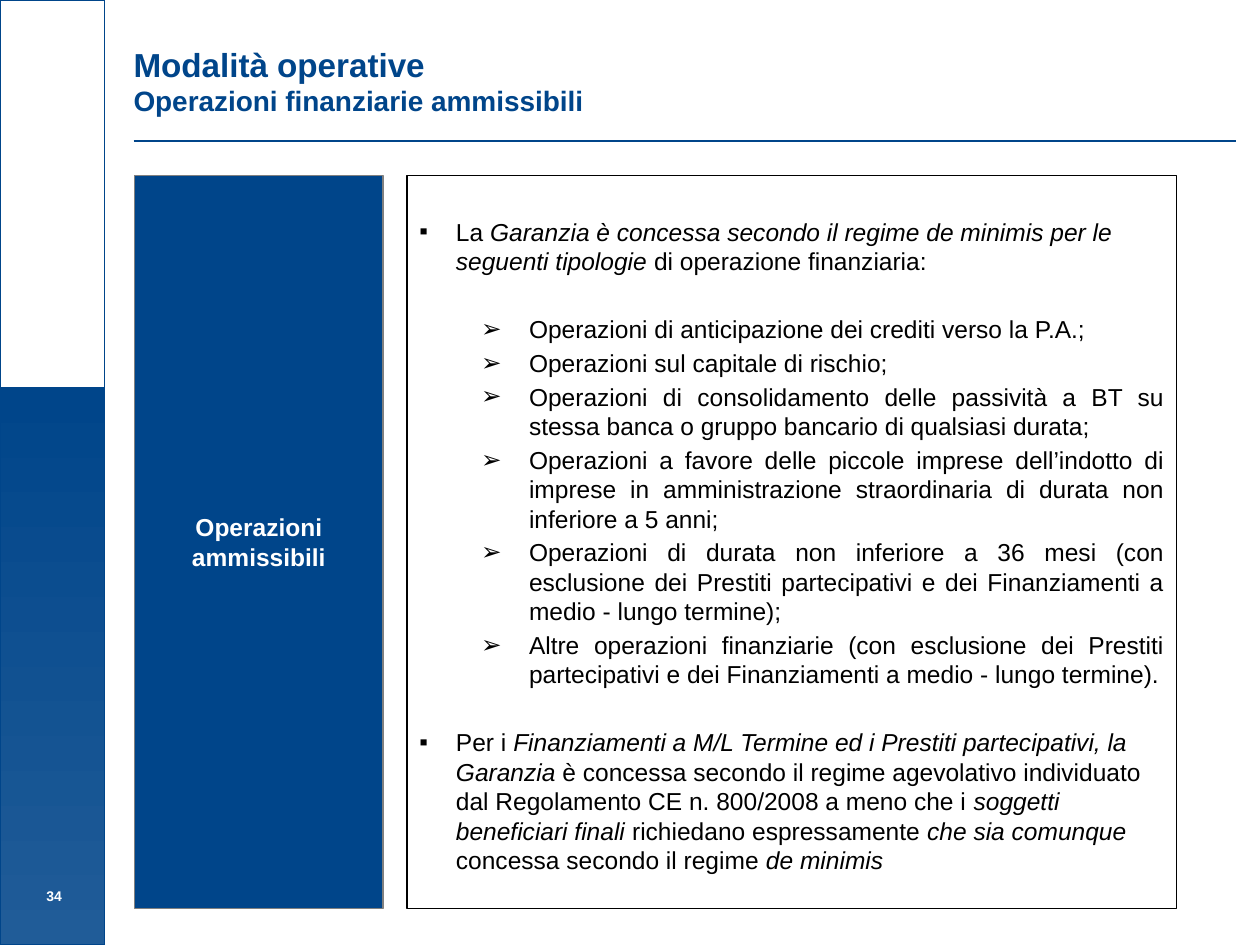
from dataclasses import dataclass

from lxml import etree
from pptx import Presentation
from pptx.dml.color import RGBColor
from pptx.enum import shapes, text
from pptx.oxml import ns
from pptx.util import Inches, Pt


@dataclass(frozen=True)
class Theme:
    font: str = "Arial"
    blue: str = "00458A"
    band_end: str = "205C98"
    grey: str = "808080"
    black: str = "000000"
    white: str = "FFFFFF"
    title: float = 19
    subtitle: float = 16
    body: float = 14
    number: float = 8
    gap: float = 2.5
    section_gap: float = 22


THEME = Theme()
LEVELS = {
    "▪": {"margin": 0.29, "hanging": 0.29, "align": text.PP_ALIGN.LEFT},
    "➢": {"margin": 0.87, "hanging": 0.38, "align": text.PP_ALIGN.JUSTIFY},
}
INTRO = [
    ("La ", False),
    ("Garanzia è concessa secondo il regime de minimis per le seguenti tipologie ", True),
    ("di operazione finanziaria:", False),
]
OPERATIONS = [
    "Operazioni di anticipazione dei crediti verso la P.A.;",
    "Operazioni sul capitale di rischio;",
    "Operazioni di consolidamento delle passività a BT su stessa banca o gruppo "
    "bancario di qualsiasi durata;",
    "Operazioni a favore delle piccole imprese dell’indotto di imprese in "
    "amministrazione straordinaria di durata non inferiore a 5 anni;",
    "Operazioni di durata non inferiore a 36 mesi (con esclusione dei Prestiti "
    "partecipativi e dei Finanziamenti a medio - lungo termine);",
    "Altre operazioni finanziarie (con esclusione dei Prestiti partecipativi e dei "
    "Finanziamenti a medio - lungo termine).",
]
CLOSING = [
    ("Per i ", False),
    ("Finanziamenti a M/L Termine ed i Prestiti partecipativi, la Garanzia ", True),
    ("è concessa secondo il regime agevolativo individuato dal Regolamento CE "
     "n. 800/2008 a meno che i ", False),
    ("soggetti beneficiari finali ", True),
    ("richiedano espressamente ", False),
    ("che sia comunque ", True),
    ("concessa secondo il regime ", False),
    ("de minimis", True),
]


def rgb(value):
    return RGBColor.from_string(value)


def apply(target, values):
    for name, value in values.items():
        setattr(target, name, value)


def add_run(paragraph, words, size, color, **style):
    run = paragraph.add_run()
    run.text = words
    apply(run.font, {"name": THEME.font, "size": Pt(size), **style})
    run.font.color.rgb = rgb(color)


def set_frame(frame, anchor, side=0.1, top=0.05):
    apply(frame, {
        "word_wrap": True, "auto_size": text.MSO_AUTO_SIZE.NONE,
        "vertical_anchor": anchor,
        "margin_left": Inches(side), "margin_right": Inches(side),
        "margin_top": Inches(top), "margin_bottom": Inches(0.05),
    })


def add_box(slide, bounds, line, fill=None):
    box = slide.shapes.add_shape(shapes.MSO_SHAPE.RECTANGLE, *map(Inches, bounds))
    box.shadow.inherit = False
    box.line.color.rgb = rgb(line)
    box.line.width = Pt(0.75)
    if fill:
        box.fill.solid()
        box.fill.fore_color.rgb = rgb(fill)
    else:
        box.fill.background()
    return box


def add_side_band(slide):
    band = add_box(slide, (0, 3.08, 0.83, 4.42), THEME.blue)
    band.fill.gradient()
    band.fill.gradient_angle = 270
    for stop, color in zip(band.fill.gradient_stops, (THEME.blue, THEME.band_end)):
        stop.color.rgb = rgb(color)
    add_box(slide, (0, 0, 0.83, 3.12), THEME.blue)


def add_title_rule(slide):
    rule = slide.shapes.add_connector(
        shapes.MSO_CONNECTOR.STRAIGHT, *map(Inches, (1.06, 1.12, 9.81, 1.12)))
    rule.line.color.rgb = rgb(THEME.blue)
    rule.line.width = Pt(1.5)
    etree.SubElement(rule._element.spPr, ns.qn("a:effectLst"))


def set_title(slide):
    title = slide.shapes.title
    bounds = (0.96, 0.3, 8.48, 0.69)
    apply(title, dict(zip(("left", "top", "width", "height"), map(Inches, bounds))))
    set_frame(title.text_frame, text.MSO_ANCHOR.TOP)
    paragraph = title.text_frame.paragraphs[0]
    paragraph.alignment = text.PP_ALIGN.LEFT
    add_run(paragraph, "Modalità operative", THEME.title, THEME.blue, bold=True)
    paragraph.add_line_break()
    add_run(paragraph, "Operazioni finanziarie ammissibili", THEME.subtitle,
            THEME.blue, bold=True)


def add_page_number(slide):
    number = slide.shapes.add_textbox(*map(Inches, (0, 6.73, 0.86, 0.5)))
    set_frame(number.text_frame, text.MSO_ANCHOR.BOTTOM)
    paragraph = number.text_frame.paragraphs[0]
    paragraph.alignment = text.PP_ALIGN.CENTER
    add_run(paragraph, "34", THEME.number, THEME.white, bold=True)


def add_category(slide):
    category = add_box(slide, (1.07, 1.39, 1.97, 5.82), THEME.grey, THEME.blue)
    set_frame(category.text_frame, text.MSO_ANCHOR.MIDDLE, side=0.09)
    paragraph = category.text_frame.paragraphs[0]
    paragraph.alignment = text.PP_ALIGN.CENTER
    add_run(paragraph, "Operazioni ammissibili", THEME.body, THEME.white, bold=True)


def fill_bullet(paragraph, mark, runs, space):
    level = LEVELS[mark]
    properties = paragraph._p.get_or_add_pPr()
    properties.set("marL", str(Inches(level["margin"])))
    properties.set("indent", str(-Inches(level["hanging"])))
    etree.SubElement(properties, ns.qn("a:buFont"), typeface=THEME.font)
    etree.SubElement(properties, ns.qn("a:buChar"), char=mark)
    apply(paragraph, {"alignment": level["align"], "space_before": Pt(space),
                      "level": int(mark == "➢")})
    for words, italic in runs:
        add_run(paragraph, words, THEME.body, THEME.black, italic=italic)


def add_details(slide):
    details = add_box(slide, (3.23, 1.39, 6.11, 5.82), THEME.black)
    frame = details.text_frame
    set_frame(frame, text.MSO_ANCHOR.TOP, top=0.33)
    fill_bullet(frame.paragraphs[0], "▪", INTRO, 0)
    for index, operation in enumerate(OPERATIONS):
        space = THEME.gap if index else THEME.section_gap
        fill_bullet(frame.add_paragraph(), "➢", [(operation, False)], space)
    fill_bullet(frame.add_paragraph(), "▪", CLOSING, THEME.section_gap)


def main():
    deck = Presentation()
    apply(deck, {"slide_width": Inches(10), "slide_height": Inches(7.5)})
    slide = deck.slides.add_slide(deck.slide_layouts[5])
    add_title_rule(slide)
    add_side_band(slide)
    add_page_number(slide)
    set_title(slide)
    add_category(slide)
    add_details(slide)
    deck.save("out.pptx")


if __name__ == "__main__":
    main()
